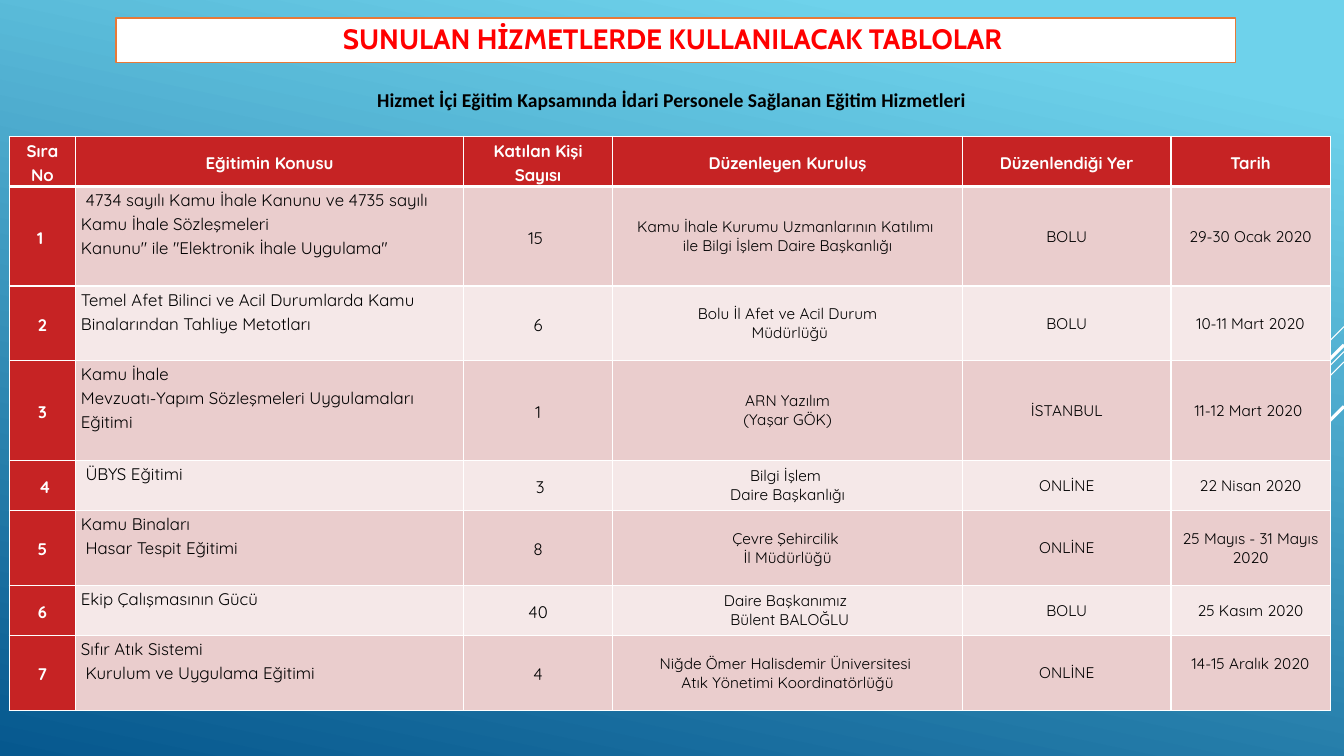
from lxml import etree
from pptx import Presentation
from pptx.dml.color import RGBColor
from pptx.enum.shapes import MSO_CONNECTOR, MSO_SHAPE
from pptx.enum.text import MSO_ANCHOR, PP_ALIGN
from pptx.oxml.ns import qn
from pptx.util import Cm, Pt

STRAIGHT = MSO_CONNECTOR.STRAIGHT
RECTANGLE = MSO_SHAPE.RECTANGLE
TOP, MIDDLE = MSO_ANCHOR.TOP, MSO_ANCHOR.MIDDLE
LEFT, CENTER = PP_ALIGN.LEFT, PP_ALIGN.CENTER

RED, WHITE, BLACK = "C62324", "FFFFFF", "000000"
BANDS = ["EACDCD", "F5E8E8"]
SLIDE_WIDTH = 33.87

HEADERS = ["Sıra No", "Eğitimin Konusu", "Katılan Kişi Sayısı",
           "Düzenleyen Kuruluş", "Düzenlendiği Yer", "Tarih"]
TRAININGS = [
    ["1 ", " 4734 sayılı Kamu İhale Kanunu ve 4735 sayılı Kamu İhale Sözleşmeleri\n"
     "Kanunu\" ile \"Elektronik İhale Uygulama\"", "15 ",
     "Kamu İhale Kurumu Uzmanlarının Katılımı \nile Bilgi İşlem Daire Başkanlığı",
     "BOLU", "29-30 Ocak 2020"],
    ["2", "Temel Afet Bilinci ve Acil Durumlarda Kamu Binalarından Tahliye Metotları", "6",
     "Bolu İl Afet ve Acil Durum\n Müdürlüğü", "BOLU", "10-11 Mart 2020"],
    ["3", "Kamu İhale\nMevzuatı-Yapım Sözleşmeleri Uygulamaları Eğitimi", "1",
     "ARN Yazılım\n(Yaşar GÖK)", "İSTANBUL", "11-12 Mart 2020 "],
    [" 4", " ÜBYS Eğitimi", " 3",
     "Bilgi İşlem \nDaire Başkanlığı", "ONLİNE", "22 Nisan 2020"],
    ["5", "Kamu Binaları\n Hasar Tespit Eğitimi", "8",
     "Çevre Şehircilik \nİl Müdürlüğü", "ONLİNE", "25 Mayıs - 31 Mayıs 2020"],
    ["6", "Ekip Çalışmasının Gücü", "40",
     "Daire Başkanımız \n Bülent BALOĞLU", "BOLU", "25 Kasım 2020"],
    ["7", "Sıfır Atık Sistemi\n Kurulum ve Uygulama Eğitimi", "4",
     "Niğde Ömer Halisdemir Üniversitesi \nAtık Yönetimi Koordinatörlüğü",
     "ONLİNE", "14-15 Aralık 2020"],
]
COLUMN_WIDTHS = [1.68, 9.77, 3.76, 8.82, 5.25, 4.01]
ROW_HEIGHTS = [1.27, 2.51, 1.88, 2.51, 1.27, 1.88, 1.27, 1.88]


def color(hex_string):
    return RGBColor.from_string(hex_string)


def write(frame, text, font="Quicksand", size=12, ink=BLACK, bold=False,
          align=CENTER, spacing=1.0):
    """Fill a text frame, one paragraph for each line of the text."""
    frame.word_wrap = True
    for index, line in enumerate(text.split("\n")):
        para = frame.paragraphs[0] if index == 0 else frame.add_paragraph()
        para.alignment = align
        para.line_spacing = spacing
        span = para.add_run()
        span.text = line
        span.font.name = font
        span.font.size = Pt(size)
        span.font.bold = bold
        span.font.color.rgb = color(ink)


deck = Presentation()
deck.slide_width, deck.slide_height = Cm(SLIDE_WIDTH), Cm(19.05)
page = deck.slides.add_slide(deck.slide_layouts[6])

# Background gradient
backdrop = page.background.fill
backdrop.gradient()
backdrop.gradient_angle = 258
for stop, (position, shade) in zip(backdrop.gradient_stops, [(0.1, "6ED2EB"), (1, "06588E")]):
    stop.position = position
    stop.color.rgb = color(shade)

# Diagonal strokes running down from the right edge: top, reach, width
for top, reach, width in [(8.23, 2.54, 0.75), (8.86, 8.28, 0.75), (9.12, 5.27, 0.75),
                          (8.69, 4.85, 2.25), (10.24, 3.53, 2.25)]:
    stroke = page.shapes.add_connector(STRAIGHT, Cm(SLIDE_WIDTH), Cm(top),
                                       Cm(SLIDE_WIDTH - reach), Cm(top + reach))
    stroke.line.color.rgb = color(WHITE)
    stroke.line.width = Pt(width)
    etree.SubElement(stroke._element.spPr, qn("a:effectLst"))

# Subtitle
subtitle = page.shapes.add_textbox(Cm(3.28), Cm(2.08), Cm(27.3), Cm(14.02))
write(subtitle.text_frame,
      "Hizmet İçi Eğitim Kapsamında İdari Personele Sağlanan Eğitim Hizmetleri",
      font="Calibri", size=14, bold=True)

# Training table
table = page.shapes.add_table(len(ROW_HEIGHTS), len(COLUMN_WIDTHS), Cm(0.23), Cm(3.43),
                              Cm(sum(COLUMN_WIDTHS)), Cm(sum(ROW_HEIGHTS))).table
table.horz_banding = False
for column, width in zip(table.columns, COLUMN_WIDTHS):
    column.width = Cm(width)
for row, height in zip(table.rows, ROW_HEIGHTS):
    row.height = Cm(height)

for r, texts in enumerate([HEADERS] + TRAININGS):
    for c, text in enumerate(texts):
        cell = table.cell(r, c)
        is_label = r == 0 or c == 0
        is_topic = r > 0 and c == 1
        is_detail = r > 0 and c > 2
        cell.margin_left = cell.margin_right = Cm(0.13)
        cell.margin_top = cell.margin_bottom = 0
        cell.vertical_anchor = TOP if is_topic else MIDDLE
        thick_edge = {0: "lnB", 1: "lnT"}.get(r)
        for edge in ["lnL", "lnR", "lnT", "lnB"]:
            border = etree.SubElement(cell._tc.get_or_add_tcPr(), qn("a:" + edge),
                                      w=str(Pt(3 if edge == thick_edge else 1)))
            paint = etree.SubElement(border, qn("a:solidFill"))
            etree.SubElement(paint, qn("a:srgbClr"), val=WHITE)
        cell.fill.solid()
        cell.fill.fore_color.rgb = color(RED if is_label else BANDS[(r - 1) % 2])
        write(cell.text_frame, text, size=11 if is_detail else 12,
              ink=WHITE if is_label else BLACK, bold=is_label,
              align=LEFT if is_topic else CENTER, spacing=1.0 if is_detail else 1.15)

# The last date sits above the middle of its row
table.cell(7, 5).margin_bottom = Cm(0.48)

# Title
title = page.shapes.add_shape(RECTANGLE, Cm(2.92), Cm(0.46), Cm(28.22), Cm(1.12))
title.shadow.inherit = False
title.fill.solid()
title.fill.fore_color.rgb = color(WHITE)
title.line.color.rgb = color("E87937")
title.line.width = Pt(1.25)
title.text_frame.vertical_anchor = MIDDLE
write(title.text_frame, "SUNULAN HİZMETLERDE KULLANILACAK TABLOLAR ",
      font="Cabin", size=20, ink="FF0000", bold=True, spacing=0.9)

deck.save("out.pptx")
